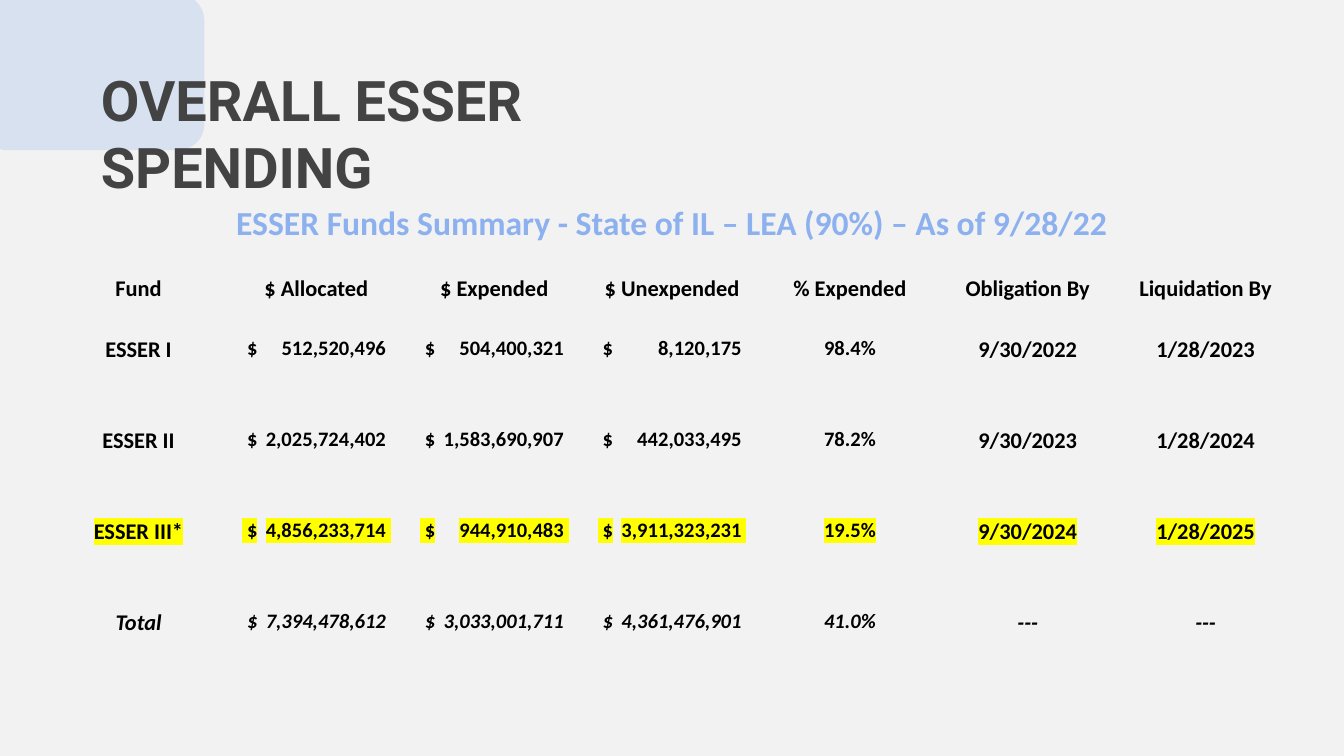
from lxml import etree
from pptx import Presentation
from pptx.dml.color import RGBColor
from pptx.enum.shapes import MSO_SHAPE
from pptx.enum.text import MSO_ANCHOR, MSO_AUTO_SIZE, PP_ALIGN
from pptx.oxml.ns import qn
from pptx.util import Pt

ROUND = MSO_SHAPE.ROUNDED_RECTANGLE
TOP = MSO_ANCHOR.TOP
FIXED = MSO_AUTO_SIZE.NONE
LEFT, MID = PP_ALIGN.LEFT, PP_ALIGN.CENTER

PLAIN = "{2D5ABB26-0587-4C30-8999-92F81FD0307C}"  # no style, no grid
HUES = {"back": "F2F2F2", "blue": "8CB1EE", "title": "434343",
        "text": "000000", "mark": "FFFF00"}

CAPTION = "ESSER Funds Summary - State of IL – LEA (90%) – As of 9/28/22"
HEADS = ["Fund", "$ Allocated", "$ Expended", "$ Unexpended",
         "% Expended", "Obligation By", "Liquidation By"]
FUNDS = [
    ["ESSER I", "512,520,496", "504,400,321", "8,120,175",
     "98.4%", "9/30/2022", "1/28/2023"],
    ["ESSER II", "2,025,724,402", "1,583,690,907", "442,033,495",
     "78.2%", "9/30/2023", "1/28/2024"],
    ["ESSER III*", "4,856,233,714", "944,910,483", "3,911,323,231",
     "19.5%", "9/30/2024", "1/28/2025"],
    ["Total", "7,394,478,612", "3,033,001,711", "4,361,476,901",
     "41.0%", "---", "---"],
]
MONEY = range(1, 4)
SMALL = range(1, 5)


class Deck:
    head, body = "Roboto", "Calibri"
    inset = Pt(7.2)

    def __init__(self, wide, high):
        self.prs = Presentation()
        self.prs.slide_width, self.prs.slide_height = Pt(wide), Pt(high)
        self.slide = self.prs.slides.add_slide(self.prs.slide_layouts[5])
        self.paint(self.slide.background.fill, "back")

    def paint(self, fill, hue):
        fill.solid()
        fill.fore_color.rgb = RGBColor.from_string(HUES[hue])

    def run(self, para, text, size, hue, face, slant=False, mark=False):
        run = para.add_run()
        run.text = text
        font = run.font
        font.size, font.bold, font.italic = Pt(size), True, slant
        font.color.rgb = RGBColor.from_string(HUES[hue])
        if mark:
            glow = etree.SubElement(font._element, qn("a:highlight"))
            etree.SubElement(glow, qn("a:srgbClr"), val=HUES["mark"])
        font.name = face

    def block(self, x, y, wide, high, hue, alpha):
        shape = self.slide.shapes.add_shape(
            ROUND, Pt(x), Pt(y), Pt(wide), Pt(high))
        shape.shadow.inherit = False
        shape.line.fill.background()
        self.paint(shape.fill, hue)
        tint = shape._element.spPr.find(".//" + qn("a:srgbClr"))
        etree.SubElement(tint, qn("a:alpha"), val=str(alpha * 1000))
        # Send behind the title
        self.slide.shapes._spTree.insert(2, shape._element)

    def title(self, text, x, y, wide, high):
        shape = self.slide.shapes.title
        shape.left, shape.top = Pt(x), Pt(y)
        shape.width, shape.height = Pt(wide), Pt(high)
        frame = shape.text_frame
        frame.word_wrap, frame.auto_size = True, FIXED
        frame.vertical_anchor = TOP
        frame.margin_left = frame.margin_right = self.inset
        frame.margin_top = frame.margin_bottom = self.inset
        para = frame.paragraphs[0]
        para.alignment = LEFT
        self.run(para, text, 30, "title", self.head)

    def table(self, x, y, wide, rows, cols):
        frame = self.slide.shapes.add_table(
            len(rows), cols, Pt(x), Pt(y), Pt(wide), Pt(sum(rows)))
        table = frame.table
        table._tbl.tblPr.find(qn("a:tableStyleId")).text = PLAIN
        table.first_row = table.horz_banding = False
        for row, high in zip(table.rows, rows):
            row.height = Pt(high)
        for col in table.columns:
            col.width = Pt(wide / cols)
        return table

    def cell(self, cell, text, size=12, hue="text", cash=False, **look):
        cell.fill.background()
        cell.vertical_anchor = TOP
        cell.margin_left = cell.margin_right = self.inset
        cell.margin_top = cell.margin_bottom = self.inset
        para = cell.text_frame.paragraphs[0]
        para.alignment = LEFT if cash else MID
        para.line_spacing = 1.15
        if cash:
            # Dollar sign at the left, amount set to a right tab
            cell.margin_left, cell.margin_right = Pt(8), Pt(4)
            tabs = etree.SubElement(para._p.get_or_add_pPr(), qn("a:tabLst"))
            etree.SubElement(tabs, qn("a:tab"), pos=str(Pt(79.5)), algn="r")
            text = f" $\t{text} "
        self.run(para, text, size, hue, self.body, **look)


def main():
    deck = Deck(720, 405)

    # Corner block and title
    deck.block(-10, -3, 119.5, 83.5, "blue", 25)
    deck.title("OVERALL ESSER SPENDING", 46.8, 28, 309, 62)

    # Table caption and column heads
    grid = deck.table(26.6, 98.6, 667, [34.5, 32.5] + [48.75] * 4, len(HEADS))
    grid.cell(0, 0).merge(grid.cell(0, len(HEADS) - 1))
    deck.cell(grid.cell(0, 0), CAPTION, 18, "blue")
    for c, text in enumerate(HEADS):
        deck.cell(grid.cell(1, c), text)

    # Funds
    for r, fund in enumerate(FUNDS, 2):
        for c, text in enumerate(fund):
            deck.cell(grid.cell(r, c), text, 11 if c in SMALL else 12,
                      cash=c in MONEY, slant=fund[0] == "Total",
                      mark=fund[0] == "ESSER III*")

    deck.prs.save("out.pptx")


if __name__ == "__main__":
    main()
